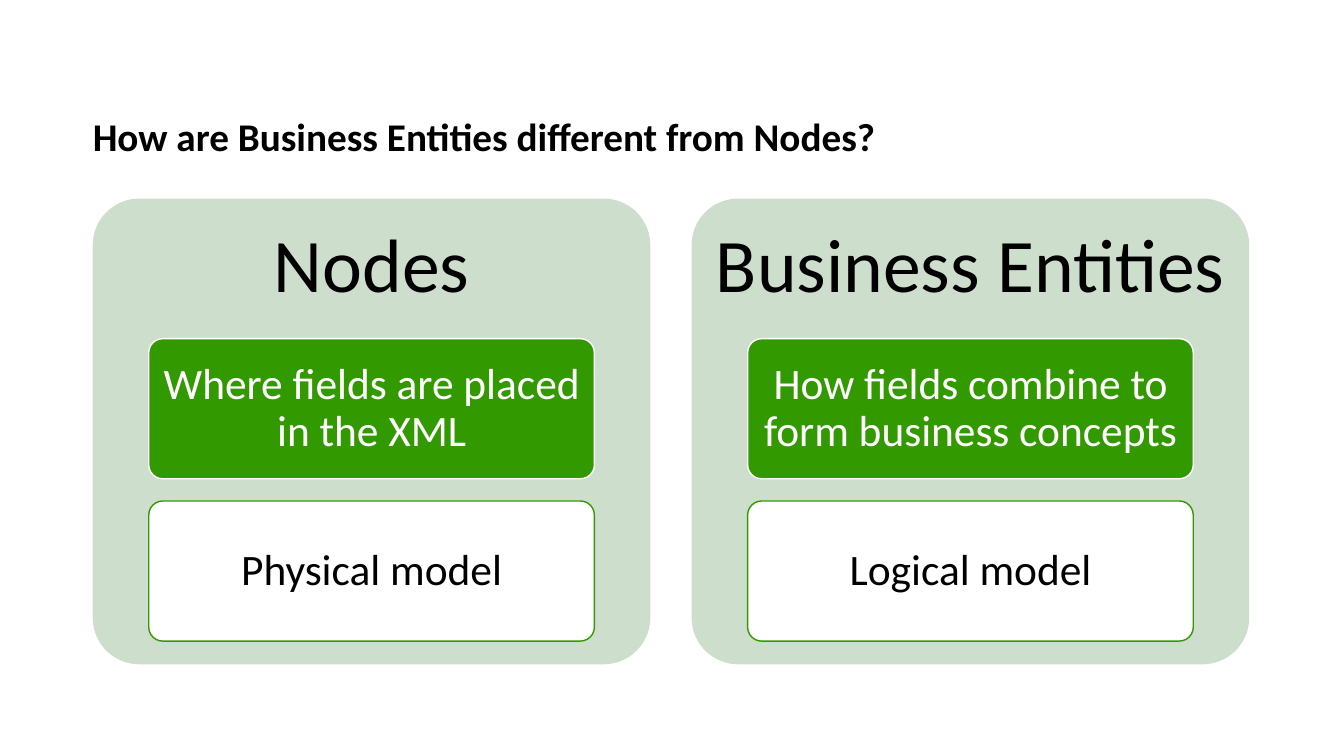
from pptx import Presentation
from pptx.dml.color import RGBColor
from pptx.enum.shapes import MSO_SHAPE as Shape
from pptx.enum.text import MSO_ANCHOR as Anchor, PP_ALIGN as Align
from pptx.util import Inches, Pt

BLACK = RGBColor(0, 0, 0)
WHITE = RGBColor(0xFF, 0xFF, 0xFF)
GREEN = RGBColor(0x33, 0x99, 0x00)
PALE = RGBColor(0xCE, 0xDE, 0xCC)

LEFT, TOP = 0.92, 1.97
WIDTH, HEIGHT = 5.53, 4.62
STEP = 5.94
HEAD = 1.38
CARD_W, CARD_H = 4.42, 1.39
CARD_TOP, CARD_STEP = 3.36, 1.61
INDENT = (WIDTH - CARD_W) / 2

PANELS = [
    ("Nodes", "Where fields are placed in the XML", "Physical model"),
    ("Business Entities", "How fields combine to form business concepts",
     "Logical model"),
]


def write(shape, text, size, color, insets, align=Align.CENTER,
          anchor=Anchor.MIDDLE, bold=False):
    """Fill a shape with one paragraph; insets are left, top, right, bottom."""
    frame = shape.text_frame
    frame.text = text
    frame.word_wrap = True
    frame.vertical_anchor = anchor
    (frame.margin_left, frame.margin_top,
     frame.margin_right, frame.margin_bottom) = map(Inches, insets)
    para = frame.paragraphs[0]
    para.alignment = align
    para.line_spacing = 0.9
    font = para.runs[0].font
    font.name = "Calibri"
    font.size = Pt(size)
    font.bold = bold
    font.color.rgb = color


def add_box(slide, x, y, w, h, fill, line=None):
    box = slide.shapes.add_shape(Shape.ROUNDED_RECTANGLE, *map(Inches, (x, y, w, h)))
    box.adjustments[0] = 0.1
    box.shadow.inherit = False
    box.fill.solid()
    box.fill.fore_color.rgb = fill
    if line is None:
        box.line.fill.background()
    else:
        box.line.color.rgb = line
        box.line.width = Pt(1)
    return box


def add_title(slide, text):
    title = slide.shapes.add_textbox(*map(Inches, (LEFT, 0.14, 11.48, 1.45)))
    write(title, text, 28, BLACK, (0, 0.05, 0, 0), Align.LEFT, Anchor.BOTTOM, True)


def add_panel(slide, x, head, role, model):
    add_box(slide, x, TOP, WIDTH, HEIGHT, PALE)
    label = slide.shapes.add_textbox(*map(Inches, (x, TOP, WIDTH, HEAD)))
    write(label, head, 54, BLACK, (0.23,) * 4)
    cards = [(role, GREEN, WHITE, WHITE), (model, WHITE, GREEN, BLACK)]
    for row, (text, fill, line, color) in enumerate(cards):
        card = add_box(slide, x + INDENT, CARD_TOP + row * CARD_STEP,
                       CARD_W, CARD_H, fill, line)
        write(card, text, 31, color, (0.09, 0.06, 0.09, 0.06))


def main():
    deck = Presentation()
    deck.slide_width, deck.slide_height = Inches(13.33), Inches(7.5)
    slide = deck.slides.add_slide(deck.slide_layouts[6])
    add_title(slide, "How are Business Entities different from Nodes?")
    for col, panel in enumerate(PANELS):
        add_panel(slide, LEFT + col * STEP, *panel)
    deck.save("out.pptx")


if __name__ == "__main__":
    main()
